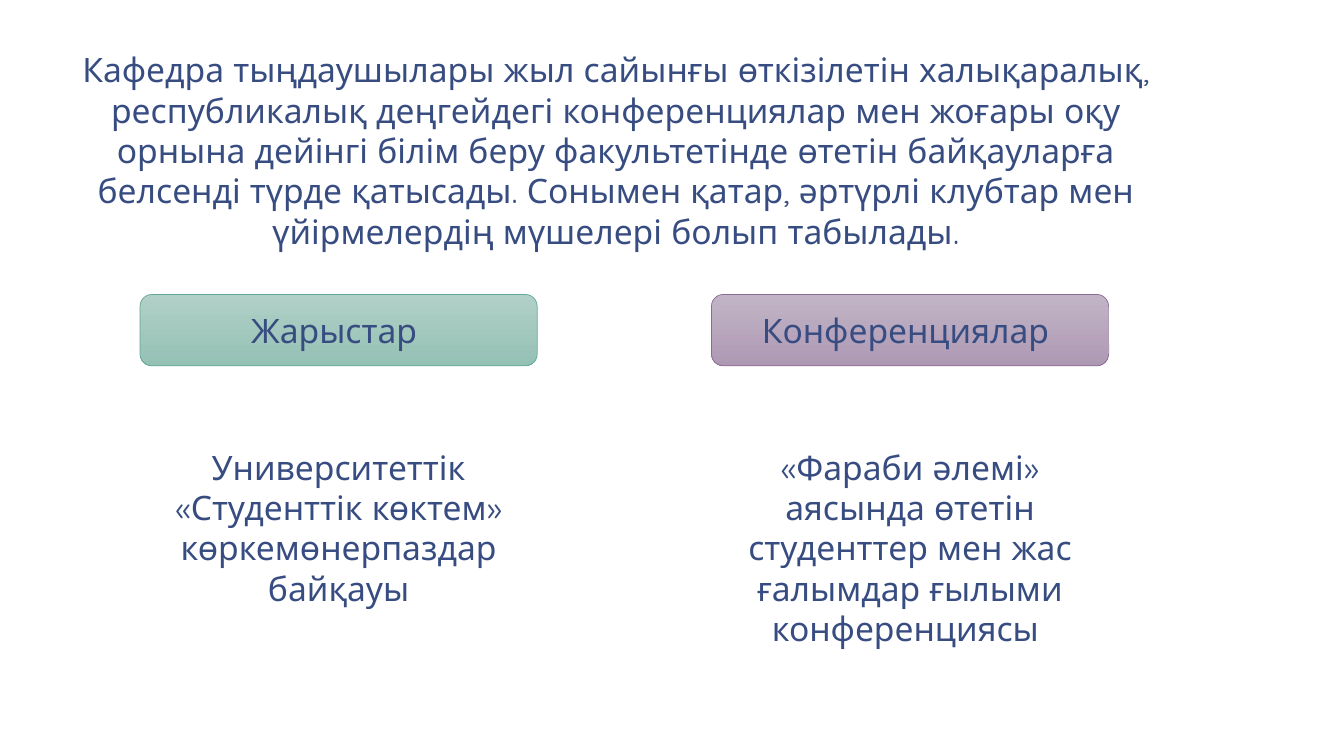
from dataclasses import dataclass

from pptx import Presentation
from pptx.dml.color import RGBColor as Rgb
from pptx.enum.shapes import MSO_SHAPE as Form
from pptx.enum.text import MSO_ANCHOR as Anchor, MSO_AUTO_SIZE as Fit, PP_ALIGN as Align
from pptx.util import Cm, Pt


@dataclass(frozen=True)
class Theme:
    """Colours, font and sizes of the slide."""
    font: str = "Quicksand"
    size: float = 24
    ink: str = "374C81"
    edge: float = 0.5
    green: tuple = ("B1D0C7", "95C1B5", "61A796")
    mauve: tuple = ("C2B4C6", "AE99B4", "8B6A94")


theme = Theme()

INTRO = (
    "Кафедра тыңдаушылары жыл сайынғы өткізілетін халықаралық, "
    "республикалық деңгейдегі конференциялар мен жоғары оқу орнына дейінгі "
    "білім беру факультетінде өтетін байқауларға белсенді түрде қатысады. "
    "Сонымен қатар, әртүрлі клубтар мен үйірмелердің мүшелері болып табылады."
)
TOPICS = [
    ("Жарыстар ",
     "Университеттік «Студенттік көктем» көркемөнерпаздар байқауы",
     theme.green, 10.8, 4.37),
    ("Конференциялар ",
     "«Фараби әлемі» аясында өтетін студенттер мен жас ғалымдар ғылыми "
     "конференциясы ",
     theme.mauve, 10.39, 5.38),
]


def write(shape, text):
    """Put centred text in the theme style into a shape."""
    frame = shape.text_frame
    frame.word_wrap = True
    frame.text = text
    para = frame.paragraphs[0]
    para.alignment = Align.CENTER
    font = para.runs[0].font
    font.name, font.size = theme.font, Pt(theme.size)
    font.color.rgb = Rgb.from_string(theme.ink)


def add_text(slide, box, text):
    """Add a text box that grows with its text."""
    shape = slide.shapes.add_textbox(*map(Cm, box))
    write(shape, text)
    shape.text_frame.auto_size = Fit.SHAPE_TO_FIT_TEXT


def add_label(slide, box, text, tones):
    """Add a rounded label shaded from top to bottom."""
    shape = slide.shapes.add_shape(Form.ROUNDED_RECTANGLE, *map(Cm, box))
    shape.shadow.inherit = False
    *shades, edge = map(Rgb.from_string, tones)
    shape.fill.gradient()
    shape.fill.gradient_angle = 270
    for stop, shade in zip(shape.fill.gradient_stops, shades):
        stop.color.rgb = shade
    shape.line.color.rgb = edge
    shape.line.width = Pt(theme.edge)
    write(shape, text)
    shape.text_frame.vertical_anchor = Anchor.MIDDLE


def add_topic(slide, box, topic):
    """Add a label with its text centred below it."""
    left, top, width, height = box
    title, body, tones, wide, tall = topic
    add_label(slide, box, title, tones)
    add_text(slide, (left + (width - wide) / 2, top + 3.71, wide, tall), body)


def main():
    """Build and save the slide."""
    deck = Presentation()
    deck.slide_width, deck.slide_height = Cm(33.87), Cm(19.05)
    slide = deck.slides.add_slide(deck.slide_layouts[6])
    add_text(slide, (1.12, 1.12, 28.8, 5.38), INTRO)
    for col, topic in enumerate(TOPICS):
        add_topic(slide, (3.53 + 14.4 * col, 7.42, 10.01, 1.8), topic)
    deck.save("out.pptx")


if __name__ == "__main__":
    main()
